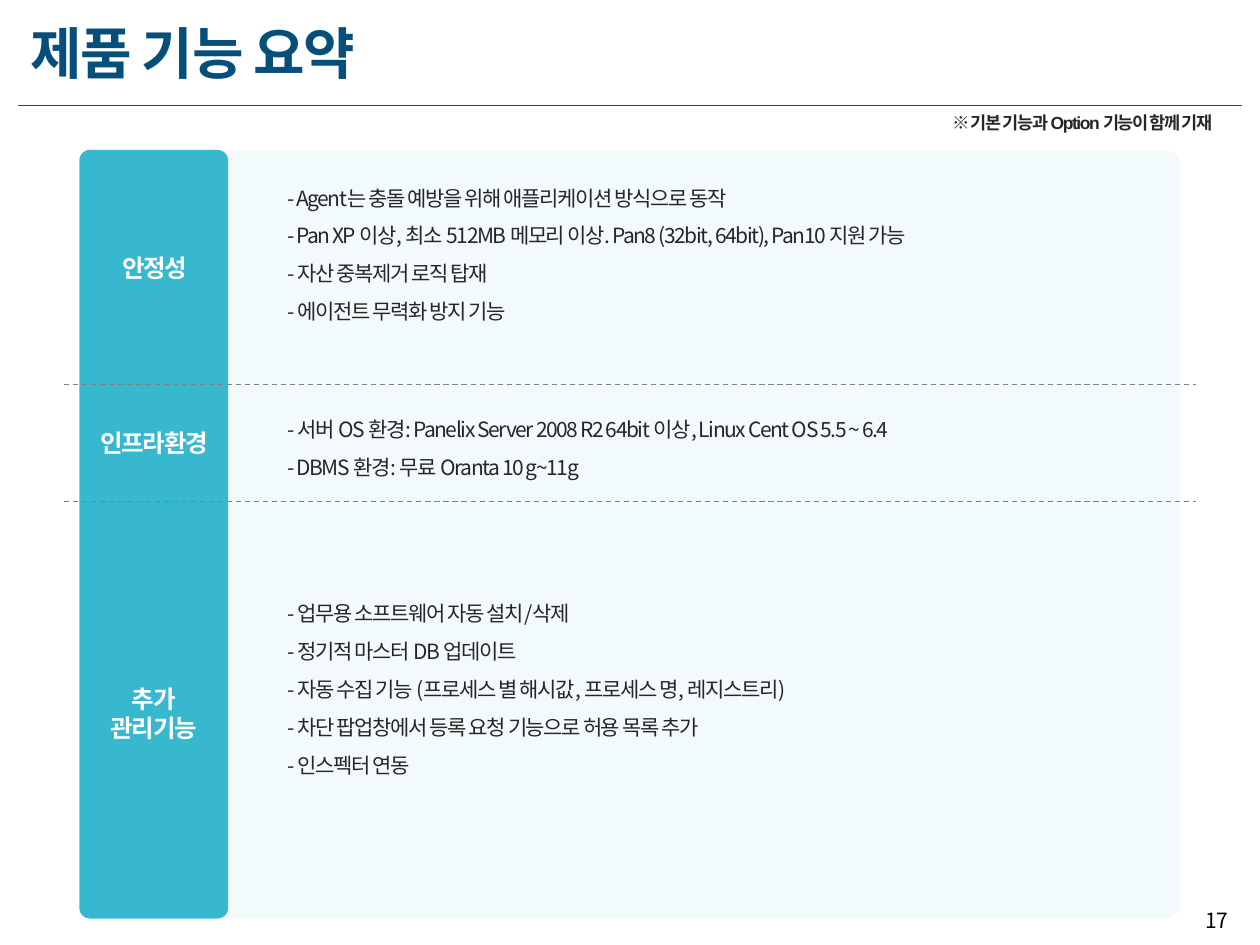
"""Build the product feature summary slide."""
from lxml import etree
from pptx import Presentation
from pptx.dml.color import RGBColor
from pptx.enum.dml import MSO_LINE
from pptx.enum.shapes import MSO_CONNECTOR, MSO_SHAPE
from pptx.enum.text import MSO_ANCHOR, MSO_AUTO_SIZE, PP_ALIGN
from pptx.oxml.ns import qn
from pptx.util import Inches, Pt

SANS = "Noto Sans CJK KR"
TEAL, NAVY, INK, GRAY = "20B0C8", "074F7B", "262626", "808080"


def color(value):
    return RGBColor.from_string(value)


def write(box, text, size=12, font=SANS, ink=INK, bold=False, align=PP_ALIGN.LEFT,
          leading=1.0, spacing=-80, anchor=MSO_ANCHOR.TOP, wrap=False):
    frame = box.text_frame
    frame.text = text
    frame.word_wrap = wrap
    frame.auto_size = MSO_AUTO_SIZE.NONE if wrap else MSO_AUTO_SIZE.SHAPE_TO_FIT_TEXT
    frame.vertical_anchor = anchor
    for paragraph in frame.paragraphs:
        paragraph.alignment = align
        paragraph.line_spacing = leading
        paragraph.space_before = Pt(0)
        for run in paragraph.runs:
            run.font.size = Pt(size)
            run.font.bold = bold
            run.font.name = font
            run.font.color.rgb = color(ink)
            properties = run.font._element
            properties.set("spc", str(spacing))
            east_asian = etree.Element(qn("a:ea"), typeface=SANS)
            properties.find(qn("a:latin")).addnext(east_asian)


prs = Presentation()
prs.slide_width, prs.slide_height = Inches(10), Inches(7.5)
slide = prs.slides.add_slide(prs.slide_layouts[5])
shapes = slide.shapes

title = shapes.title
title.left, title.top = Inches(0.14), Inches(0.1)
title.width, title.height = Inches(3.12), Inches(0.64)
write(title, "제품 기능 요약", size=32, font="Arial", ink=NAVY, bold=True)

panels = [(1.7, 7.67, 0.021, 5), (0.63, 1.18, 0.07, 89)]
for left, width, corner, opacity in panels:
    panel = shapes.add_shape(MSO_SHAPE.ROUNDED_RECTANGLE, Inches(left), Inches(1.19),
                             Inches(width), Inches(6.1))
    panel.adjustments[0] = corner
    panel.shadow.inherit = False
    panel.line.fill.background()
    panel.fill.solid()
    panel.fill.fore_color.rgb = color(TEAL)
    tint = panel._element.spPr.find(qn("a:solidFill"))[0]
    etree.SubElement(tint, qn("a:alpha"), val=str(opacity * 1000))

sections = [
    ("안정성", (0.85, 1.96, 0.76, 0.34), (1.32, 5.47, 1.31), [
        "- Agent는 충돌 예방을 위해 애플리케이션 방식으로 동작",
        "- Pan XP 이상, 최소 512MB 메모리 이상. Pan8 (32bit, 64bit), Pan10 지원 가능",
        "- 자산 중복제거 로직 탑재",
        "- 에이전트 무력화 방지 기능",
    ]),
    ("인프라환경", (0.66, 3.35, 1.13, 0.34), (3.16, 5.38, 0.67), [
        "- 서버 OS 환경: Panelix Server 2008 R2 64bit 이상, Linux Cent OS 5.5 ~ 6.4",
        "- DBMS 환경: 무료 Oranta 10 g~11g",
    ]),
    ("추가\n관리기능", (0.75, 5.38, 0.94, 0.57), (4.62, 4.59, 1.62), [
        "- 업무용 소프트웨어 자동 설치/삭제",
        "- 정기적 마스터 DB 업데이트",
        "- 자동 수집 기능 (프로세스 별 해시값, 프로세스 명, 레지스트리)",
        "- 차단 팝업창에서 등록 요청 기능으로 허용 목록 추가",
        "- 인스펙터 연동",
    ]),
]
for heading, heading_area, (top, width, height), features in sections:
    label = shapes.add_textbox(*map(Inches, heading_area))
    write(label, heading, size=14, font="Arial", ink="FFFFFF", bold=True,
          align=PP_ALIGN.CENTER)
    details = shapes.add_textbox(Inches(2.18), Inches(top), Inches(width), Inches(height))
    write(details, "\n".join(features), leading=1.5)

rules = [(0.14, 0.84, NAVY, None), (0.51, 3.05, GRAY, MSO_LINE.DASH),
         (0.51, 3.98, GRAY, MSO_LINE.DASH)]
for margin, y, ink, dash in rules:
    rule = shapes.add_connector(MSO_CONNECTOR.STRAIGHT, Inches(margin), Inches(y),
                                Inches(10 - margin), Inches(y))
    rule.line.color.rgb = color(ink)
    rule.line.width = Pt(0.75)
    rule.line.dash_style = dash
    etree.SubElement(rule._element.spPr, qn("a:effectLst"))

page_number = shapes.add_textbox(Inches(9.41), Inches(7.1), Inches(0.44), Inches(0.4))
write(page_number, "17", ink="000000", align=PP_ALIGN.RIGHT, spacing=0,
      anchor=MSO_ANCHOR.MIDDLE, wrap=True)

remark = shapes.add_textbox(Inches(7.46), Inches(0.84), Inches(2.47), Inches(0.27))
write(remark, "※ 기본 기능과 Option 기능이 함께 기재", size=10, font="Arial", bold=True)

prs.save("out.pptx")
